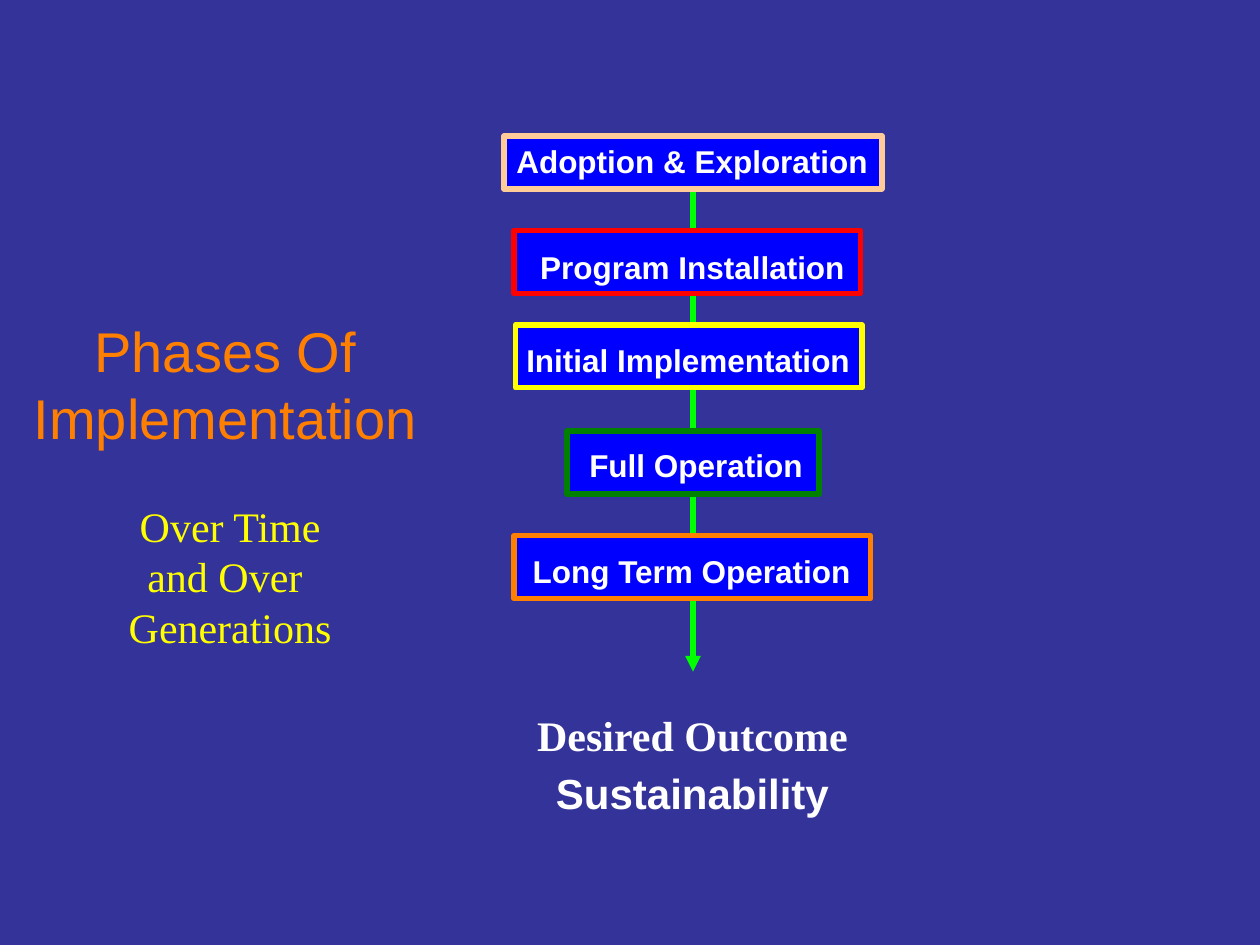
from dataclasses import dataclass

from lxml import etree
from pptx import Presentation
from pptx.dml.color import RGBColor
from pptx.enum.shapes import MSO_CONNECTOR, MSO_SHAPE
from pptx.enum.text import MSO_ANCHOR, PP_ALIGN
from pptx.oxml.ns import qn
from pptx.util import Cm, Pt

RECT = MSO_SHAPE.RECTANGLE
STRAIGHT = MSO_CONNECTOR.STRAIGHT
LEFT, CENTER = PP_ALIGN.LEFT, PP_ALIGN.CENTER
TOP, MIDDLE = MSO_ANCHOR.TOP, MSO_ANCHOR.MIDDLE

COLORS = {
    "background": "333399", "box": "0000FF", "arrow": "00FF00", "white": "FFFFFF",
    "peach": "FFCC99", "red": "FF0000", "yellow": "FFFF00", "green": "008000",
    "orange": "FF8000",
}
SANS, SERIF = "Arial", "Times New Roman"
LINE_WIDTH = Pt(3)
LABEL_HEIGHT = 1.02


@dataclass
class Area:
    left: float
    top: float
    width: float
    height: float

    def lengths(self) -> list:
        return [Cm(v) for v in (self.left, self.top, self.width, self.height)]


@dataclass
class Line:
    text: str
    size: float
    font: str
    color: str
    bold: bool = False
    before: float = 0


@dataclass
class Phase:
    name: str
    border: str
    box: Area
    label: Area


@dataclass
class Caption:
    area: Area
    lines: list[Line]
    wrap: bool = True
    anchor: MSO_ANCHOR = TOP


PHASES = [
    Phase("Adoption & Exploration", "peach",
          Area(10.16, 2.74, 7.62, 1.07), Area(10.16, 2.74, 7.59, LABEL_HEIGHT)),
    Phase("Program Installation", "red",
          Area(10.36, 4.65, 6.99, 1.27), Area(10.64, 4.88, 6.65, LABEL_HEIGHT)),
    Phase("Initial Implementation", "yellow",
          Area(10.39, 6.55, 6.99, 1.27), Area(10.36, 6.76, 7.04, LABEL_HEIGHT)),
    Phase("Full Operation", "green",
          Area(11.43, 8.69, 5.08, 1.27), Area(11.63, 8.86, 4.83, LABEL_HEIGHT)),
    Phase("Long Term Operation", "orange",
          Area(10.36, 10.8, 7.19, 1.27), Area(10.49, 11, 6.96, LABEL_HEIGHT)),
]

CAPTIONS = [
    Caption(Area(9.73, 14.17, 8.46, 2.49),
            [Line("Desired Outcome", 24, SERIF, "white", True),
             Line("Sustainability", 24, SANS, "white", True, 4.8)]),
    Caption(Area(0, 6.15, 9.09, 3.18),
            [Line("Phases Of Implementation", 32, SANS, "orange")], anchor=MIDDLE),
    Caption(Area(2.34, 9.96, 4.6, 3.3),
            [Line(text, 24, SERIF, "yellow")
             for text in ("Over Time", "and Over ", "Generations")], wrap=False),
]


def rgb(name: str) -> RGBColor:
    return RGBColor.from_string(COLORS[name])


def add_text(shapes, caption: Caption, align: PP_ALIGN) -> None:
    tf = shapes.add_textbox(*caption.area.lengths()).text_frame
    tf.word_wrap = caption.wrap
    tf.vertical_anchor = caption.anchor
    for i, line in enumerate(caption.lines):
        p = tf.add_paragraph() if i else tf.paragraphs[0]
        p.alignment = align
        p.space_before = Pt(line.before)
        r = p.add_run()
        r.text = line.text
        formats = {"name": line.font, "size": Pt(line.size), "bold": line.bold}
        for key, value in formats.items():
            setattr(r.font, key, value)
        r.font.color.rgb = rgb(line.color)


def add_phase(shapes, phase: Phase) -> None:
    group = shapes.add_group_shape()
    sp = group.shapes.add_shape(RECT, *phase.box.lengths())
    sp.shadow.inherit = False
    sp.fill.solid()
    sp.fill.fore_color.rgb = rgb("box")
    sp.line.color.rgb = rgb(phase.border)
    sp.line.width = LINE_WIDTH
    label = Line(phase.name, 18, SANS, "white", True)
    add_text(group.shapes, Caption(phase.label, [label], wrap=False), LEFT)


def add_arrow(shapes, x: float, top: float, bottom: float) -> None:
    arrow = shapes.add_connector(STRAIGHT, Cm(x), Cm(top), Cm(x), Cm(bottom))
    arrow.line.color.rgb = rgb("arrow")
    arrow.line.width = LINE_WIDTH
    etree.SubElement(arrow.line._get_or_add_ln(), qn("a:tailEnd"), type="triangle")
    etree.SubElement(arrow._element.spPr, qn("a:effectLst"))


def main() -> None:
    """Build the slide showing the phases of implementation."""
    prs = Presentation()
    prs.slide_width, prs.slide_height = Cm(25.4), Cm(19.05)
    s = prs.slides.add_slide(prs.slide_layouts[6])
    s.background.fill.solid()
    s.background.fill.fore_color.rgb = rgb("background")
    add_arrow(s.shapes, 13.97, 3.81, 13.54)
    for phase in PHASES:
        add_phase(s.shapes, phase)
    for caption in CAPTIONS:
        add_text(s.shapes, caption, CENTER)
    prs.save("out.pptx")


if __name__ == "__main__":
    main()
